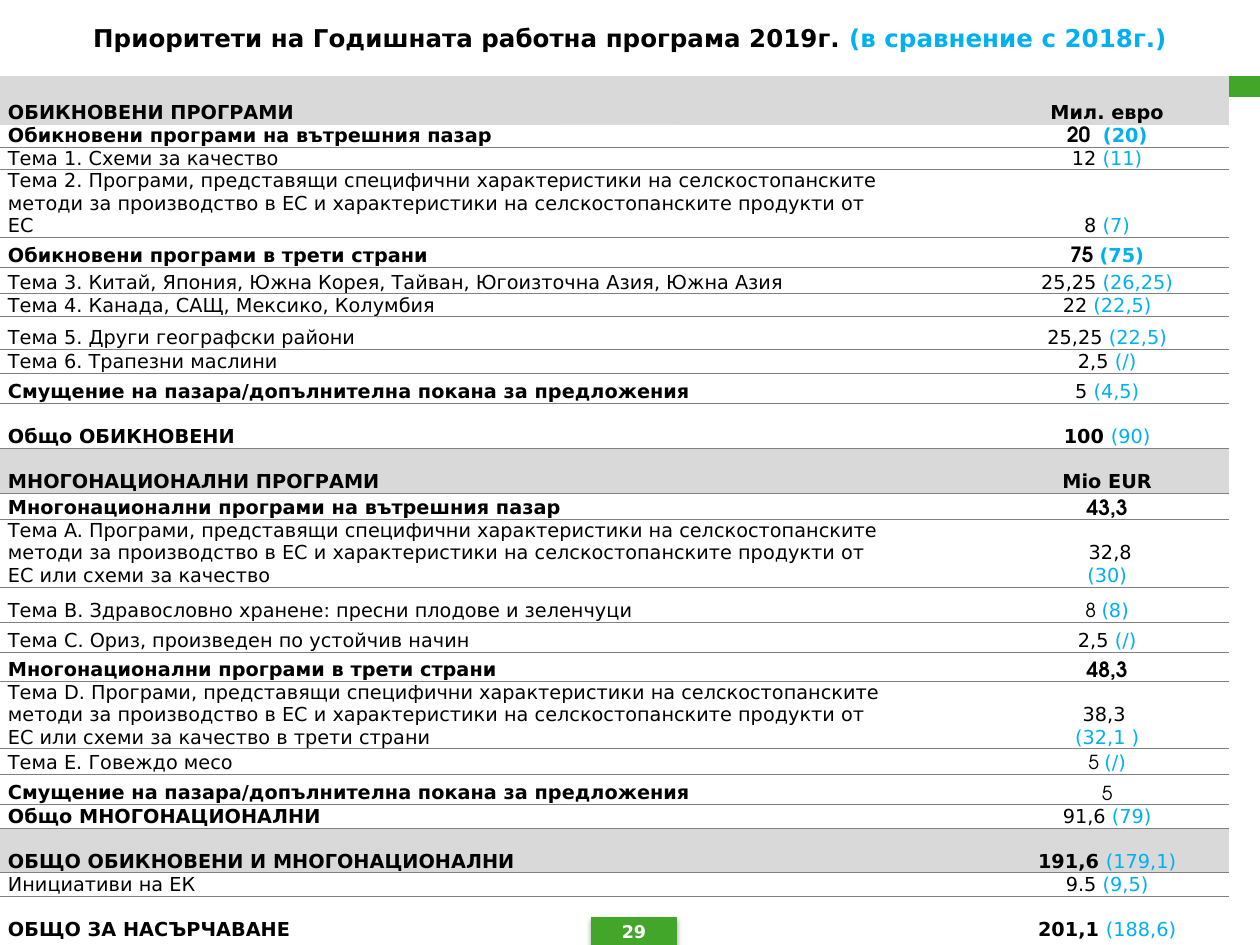
import pptx
import pptx.util
import pptx.dml.color
import pptx.enum.shapes
import pptx.enum.text
import pptx.oxml
import pptx.oxml.ns
from lxml import etree

Cm, Pt = pptx.util.Cm, pptx.util.Pt
ALIGN, ANCHOR = pptx.enum.text.PP_ALIGN, pptx.enum.text.MSO_ANCHOR
RECT = pptx.enum.shapes.MSO_SHAPE.RECTANGLE
qn = pptx.oxml.ns.qn
NS = 'xmlns:a="http://schemas.openxmlformats.org/drawingml/2006/main"'

HEX = {"green": "42A62A", "white": "FFFFFF", "black": "000000",
       "blue": "00B0F0", "band": "D9D9D9", "rule": "808080"}
SANS, GEO = "DejaVu Sans", "TeX Gyre Adventor"

# style key: font, size, colour, bold
STYLES = {
    "text": (SANS, 11, "black", False),
    "bold": (SANS, 11, "black", True),
    "past": (SANS, 11, "blue", False),
    "pastbold": (SANS, 11, "blue", True),
    "geo": (GEO, 11, "black", False),
    "geobold": (GEO, 12, "black", True),
    "title": (SANS, 14, "black", True),
    "titlepast": (SANS, 14, "blue", True),
    "page": (SANS, 10, "white", True),
}

COLS = (18.33, 1.57, 4.92)
SPECIFIC = ("Програми, представящи специфични характеристики на "
            "селскостопанските методи за производство в ЕС и характеристики "
            "на селскостопанските продукти от ЕС")
CRISIS = "Смущение на пазара/допълнителна покана за предложения"


def pair(now, past, key="text", old="past"):
    """One line: this year's figure, then last year's."""
    return [[(now + " ", key), (past, old)]]


def lone(text, key):
    return [[(text, key)]]


# height in cm, label, label style, lines of runs for the value
ROWS = [
    (2.08, "ОБИКНОВЕНИ ПРОГРАМИ", "bold", lone("Мил. евро", "bold")),
    (0.45, "Обикновени програми на вътрешния пазар", "bold",
     [[("20 ", "geobold"), (" ", "bold"), ("(20)", "pastbold")]]),
    (0.46, "Тема 1. Схеми за качество", "text", pair("12", "(11)")),
    (0.91, "Тема 2. " + SPECIFIC, "text", pair("8", "(7)")),
    (0.61, "Обикновени програми в трети страни", "bold",
     pair("75", "(75)", "geobold", "pastbold")),
    (0.53, "Тема 3. Китай, Япония, Южна Корея, Тайван, Югоизточна Азия, "
     "Южна Азия", "text", pair("25,25", "(26,25)")),
    (0.46, "Тема 4. Канада, САЩ, Мексико, Колумбия", "text",
     pair("22", "(22,5)")),
    (0.66, "Тема 5. Други географски райони", "text",
     pair("25,25", "(22,5)")),
    (0.48, "Тема 6. Трапезни маслини", "text", pair("2,5", "(/)")),
    (0.61, CRISIS, "bold", pair("5", "(4,5)")),
    (0.9, "Общо ОБИКНОВЕНИ", "bold", pair("100", "(90)", "bold")),
    (0.91, "МНОГОНАЦИОНАЛНИ ПРОГРАМИ", "bold", lone("Mio EUR", "bold")),
    (0.53, "Многонационални програми на вътрешния пазар", "bold",
     lone("43,3", "geobold")),
    (0.69, "Тема A. " + SPECIFIC + " или схеми за качество", "text",
     lone(" 32,8", "text") + lone("(30)", "past")),
    (0.71, "Тема B. Здравословно хранене: пресни плодове и зеленчуци",
     "text", pair("8", "(8)", "geo")),
    (0.61, "Тема C. Ориз, произведен по устойчив начин", "text",
     pair("2,5", "(/)")),
    (0.58, "Многонационални програми в трети страни", "bold",
     lone("48,3", "geobold")),
    (0.71, "Тема D. " + SPECIFIC + " или схеми за качество в трети страни",
     "text", lone("38,3 ", "text") + lone("(32,1 )", "past")),
    (0.51, "Тема E. Говеждо месо", "text", pair("5", "(/)", "geo")),
    (0.61, CRISIS, "bold", lone("5", "geo")),
    (0.48, "Общо МНОГОНАЦИОНАЛНИ", "bold", pair("91,6", "(79)")),
    (0.9, "ОБЩО ОБИКНОВЕНИ И МНОГОНАЦИОНАЛНИ", "bold",
     pair("191,6", "(179,1)", "bold")),
    (0.48, "Инициативи на ЕК", "text", pair("9.5", "(9,5)")),
    (0.89, "ОБЩО ЗА НАСЪРЧАВАНЕ", "bold", pair("201,1", "(188,6)", "bold")),
]
BANDS = {0, 11, 21}


def tint(name):
    return pptx.dml.color.RGBColor.from_string(HEX[name])


def write(frame, lines, align):
    for i, runs in enumerate(lines):
        para = frame.paragraphs[0] if i == 0 else frame.add_paragraph()
        para.alignment = align
        for text, key in runs:
            run = para.add_run()
            run.text = text
            face, size, hue, bold = STYLES[key]
            run.font.name, run.font.size = face, Pt(size)
            run.font.bold = bold
            run.font.color.rgb = tint(hue)


def block(slide, box, hue, lined=True):
    shape = slide.shapes.add_shape(RECT, *map(Cm, box))
    shape.shadow.inherit = False
    shape.fill.solid()
    shape.fill.fore_color.rgb = tint(hue)
    if lined:
        shape.line.color.rgb = tint(hue)
        shape.line.width = Pt(0.75)
    else:
        shape.line.fill.background()
    return shape


def edge(cell, side, shown):
    paint = (f'<a:solidFill><a:srgbClr val="{HEX["rule"]}"/></a:solidFill>'
             if shown else "<a:noFill/>")
    cell._tc.get_or_add_tcPr().append(pptx.oxml.parse_xml(
        f'<a:ln{side} {NS} w="6350">{paint}</a:ln{side}>'))


def dress(cell, row):
    """Set margins, rules and fill of one cell."""
    cell.margin_left = cell.margin_right = Cm(0.2)
    cell.margin_top = cell.margin_bottom = 0
    cell.vertical_anchor = ANCHOR.BOTTOM
    edge(cell, "L", False)
    edge(cell, "R", False)
    edge(cell, "T", row > 1)
    edge(cell, "B", 0 < row < len(ROWS) - 1)
    if row in BANDS:
        cell.fill.solid()
        cell.fill.fore_color.rgb = tint("band")
    else:
        cell.fill.background()


def budget(slide, box):
    frame = slide.shapes.add_table(len(ROWS), len(COLS), *map(Cm, box))
    table = frame.table
    table.first_row = table.horz_banding = False
    style = table._tbl.tblPr.find(qn("a:tableStyleId"))
    style.text = "{2D5ABB26-0587-4C30-8999-92F81FD0307C}"
    for col, width in zip(table.columns, COLS):
        col.width = Cm(width)
    for i, (height, label, key, value) in enumerate(ROWS):
        table.rows[i].height = Cm(height)
        name, gap, total = table.rows[i].cells
        for cell in (name, gap, total):
            dress(cell, i)
        name.margin_right = Cm(0.35)
        write(name.text_frame, lone(label, key), ALIGN.LEFT)
        write(total.text_frame, value, ALIGN.CENTER)
        end = etree.SubElement(gap.text_frame.paragraphs[0]._p,
                               qn("a:endParaRPr"))
        end.set("sz", "800")
    frame.height = Cm(box[3])


def page(slide, box):
    """Green tab with a soft shadow and the page number."""
    left, top, width, height = box
    tab = block(slide, box, "green")
    glow = tab._element.spPr.find(qn("a:effectLst"))
    glow.append(pptx.oxml.parse_xml(
        f'<a:outerShdw {NS} blurRad="39370" dist="22860" dir="5400000" '
        'rotWithShape="0"><a:srgbClr val="000000"><a:alpha val="35000"/>'
        '</a:srgbClr></a:outerShdw>'))
    text = slide.shapes.add_textbox(Cm(left - 0.03), Cm(top - 0.05),
                                    Cm(width + 0.06), Cm(height + 0.1))
    text.text_frame.word_wrap = True
    write(text.text_frame, lone("29", "page"), ALIGN.CENTER)


def heading(slide, box):
    title = slide.shapes.title
    title.left, title.top, title.width, title.height = map(Cm, box)
    title.fill.solid()
    title.fill.fore_color.rgb = tint("white")
    frame = title.text_frame
    frame.word_wrap = True
    frame.auto_size = pptx.enum.text.MSO_AUTO_SIZE.NONE
    frame.vertical_anchor = ANCHOR.MIDDLE
    write(frame, [[("Приоритети на Годишната работна програма 2019г. ",
                    "title"),
                   ("(в сравнение с 2018г.)", "titlepast")]], ALIGN.CENTER)
    slide.shapes._spTree.append(title._element)  # bring to front


def main():
    deck = pptx.Presentation()
    deck.slide_width, deck.slide_height = Cm(25.4), Cm(19.05)
    slide = deck.slides.add_slide(deck.slide_layouts[5])
    block(slide, (0, 0, 25.4, 1.95), "green")
    budget(slide, (-0.04, 0.43, sum(COLS), 18.29))
    page(slide, (11.93, 18.49, 1.7, 0.56))
    heading(slide, (0, 0, 25.4, 1.53))
    block(slide, (11.3, 2.52, 2.39, 0.41), "white", lined=False)
    deck.save("out.pptx")


if __name__ == "__main__":
    main()
